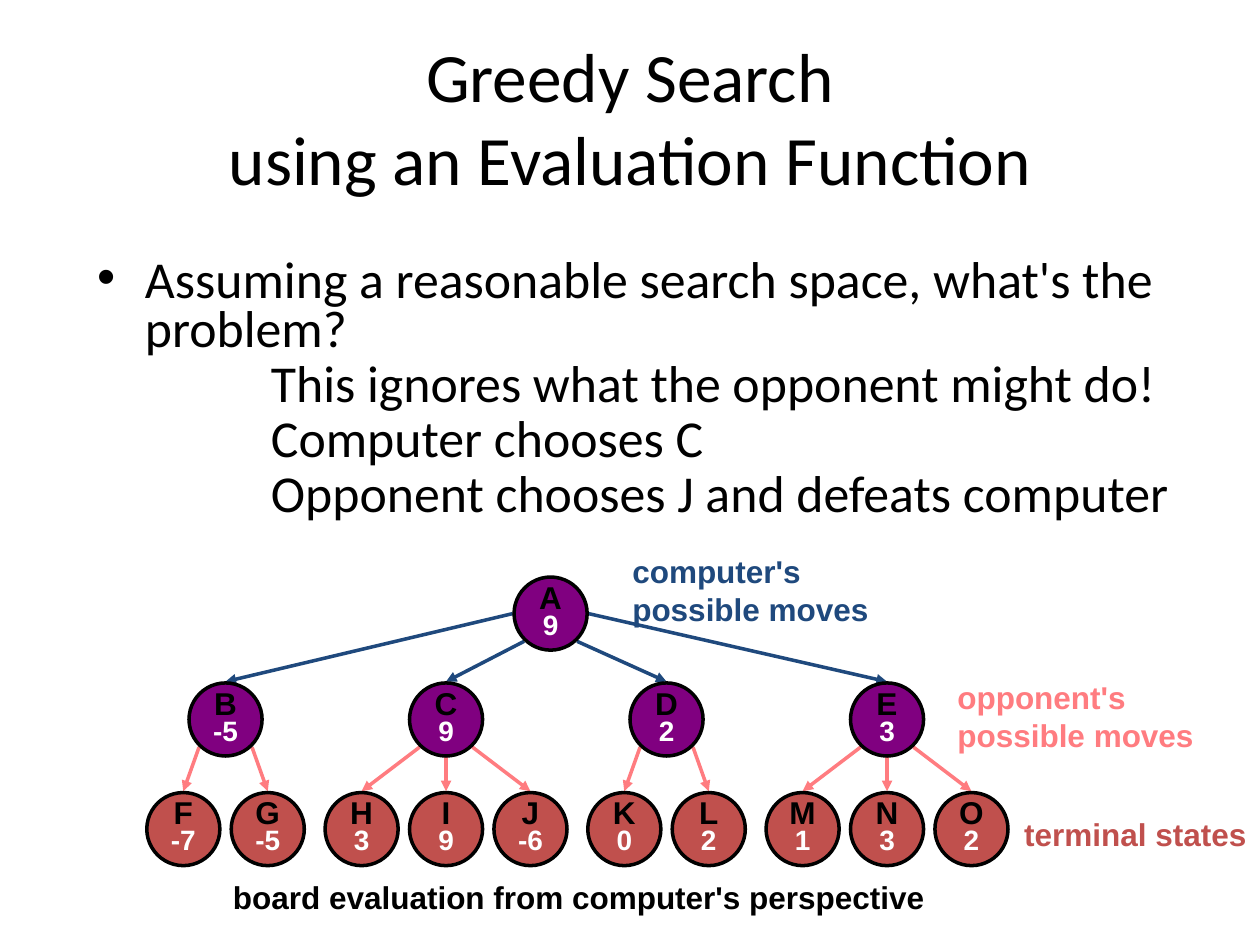
from dataclasses import dataclass

from lxml import etree
from pptx import Presentation
from pptx.dml.color import RGBColor
from pptx.enum import shapes as sh, text as tx
from pptx.oxml.ns import qn
from pptx.util import Inches, Pt

BLACK, WHITE = "000000", "FFFFFF"
PURPLE, RED = "800080", "C0504D"
NAVY, PINK = "1F497D", "FF7C80"
SIZE, PITCH = 0.58, 0.67


@dataclass
class Node:
    name: str
    score: str
    x: float
    y: float
    fill: str


@dataclass
class Label:
    text: str
    x: float
    y: float
    w: float
    h: float
    color: str


def rgb(code: str) -> RGBColor:
    return RGBColor.from_string(code)


def write(para, text: str, size=18, font="Arial", color=BLACK, bold=False,
          align=None, space=None, before=None) -> None:
    para.text = text
    para.alignment = align
    para.line_spacing = space
    para.space_before = before
    for item in (para, *para.runs):
        item.font.size = Pt(size)
        item.font.name = font
        item.font.bold = bold
        item.font.color.rgb = rgb(color)


def place(shape, x: float, y: float, w: float, h: float) -> None:
    shape.left, shape.top = Inches(x), Inches(y)
    shape.width, shape.height = Inches(w), Inches(h)


def indent(para, left: float, first: float, mark: str = "") -> None:
    props = para._p.get_or_add_pPr()
    props.set("marL", str(Inches(left)))
    props.set("indent", str(Inches(first)))
    if mark:
        etree.SubElement(props, qn("a:buFont")).set("typeface", "Arial")
        etree.SubElement(props, qn("a:buChar")).set("char", mark)
    else:
        etree.SubElement(props, qn("a:buNone"))


def draw_node(slide, node: Node) -> None:
    oval = slide.shapes.add_shape(
        sh.MSO_SHAPE.OVAL, Inches(node.x - SIZE / 2),
        Inches(node.y - SIZE / 2), Inches(SIZE), Inches(SIZE))
    oval.shadow.inherit = False
    oval.fill.solid()
    oval.fill.fore_color.rgb = rgb(node.fill)
    oval.line.color.rgb = rgb(BLACK)
    oval.line.width = Pt(2)
    frame = oval.text_frame
    frame.word_wrap = False
    frame.vertical_anchor = tx.MSO_ANCHOR.MIDDLE
    style = dict(bold=True, align=tx.PP_ALIGN.CENTER, space=0.75)
    write(frame.paragraphs[0], node.name, **style)
    write(frame.add_paragraph(), node.score, size=16, color=WHITE, **style)


def draw_arrow(slide, top: Node, low: Node, color: str) -> None:
    gap = low.x - top.x
    side = 0 if abs(gap) < 0.1 else (1 if gap > 0 else -1)
    if side == 0:
        dx, dy = 0, 0.3
    elif abs(gap) > 2:
        dx, dy = 0.3 * side, 0
    else:
        dx, dy = 0.21 * side, 0.22
    line = slide.shapes.add_connector(
        sh.MSO_CONNECTOR.STRAIGHT, Inches(top.x + dx), Inches(top.y + dy),
        Inches(low.x), Inches(low.y - SIZE / 2 - 0.01))
    line.line.color.rgb = rgb(color)
    line.line.width = Pt(2)
    etree.SubElement(line.line._get_or_add_ln(), qn("a:tailEnd")).set("type", "triangle")
    etree.SubElement(line._element.spPr, qn("a:effectLst"))


def draw_label(slide, label: Label) -> None:
    box = slide.shapes.add_textbox(0, 0, 0, 0)
    place(box, label.x, label.y, label.w, label.h)
    box.text_frame.word_wrap = False
    write(box.text_frame.paragraphs[0], label.text, color=label.color, bold=True)


def draw_text(slide) -> None:
    title, body = slide.placeholders
    place(title, 0.5, 0.3, 9, 1.25)
    title.text_frame.auto_size = tx.MSO_AUTO_SIZE.NONE
    write(title.text_frame.paragraphs[0],
          "Greedy Search\vusing an Evaluation Function",
          size=39.6, font="Calibri", align=tx.PP_ALIGN.CENTER)

    place(body, 0.67, 2, 9.08, 2.33)
    frame = body.text_frame
    frame.auto_size = tx.MSO_AUTO_SIZE.NONE
    style = dict(size=29.6, font="Calibri", space=0.8)
    para = frame.paragraphs[0]
    write(para, "Assuming a reasonable search space, what's the problem?",
          before=Pt(9), **style)
    indent(para, 0.38, -0.38, "•")
    for line in ("This ignores what the opponent might do!",
                 "Computer chooses C",
                 "Opponent chooses J and defeats computer"):
        para = frame.add_paragraph()
        write(para, line, before=Pt(3), **style)
        indent(para, 1.38, 0)


def draw_tree(slide) -> None:
    root = Node("A", "9", 4.37, 4.87, PURPLE)
    moves = [
        ("B", "-5", [("F", "-7"), ("G", "-5")]),
        ("C", "9", [("H", "3"), ("I", "9"), ("J", "-6")]),
        ("D", "2", [("K", "0"), ("L", "2")]),
        ("E", "3", [("M", "1"), ("N", "3"), ("O", "2")]),
    ]
    nodes = [root]
    for col, (name, score, leaves) in enumerate(moves):
        move = Node(name, score, 1.79 + 1.75 * col, 5.71, PURPLE)
        nodes.append(move)
        draw_arrow(slide, root, move, NAVY)
        for i, (leaf, value) in enumerate(leaves):
            x = move.x + (i - (len(leaves) - 1) / 2) * PITCH
            end = Node(leaf, value, x, 6.58, RED)
            nodes.append(end)
            draw_arrow(slide, move, end, PINK)
    for node in nodes:
        draw_node(slide, node)


def main() -> None:
    deck = Presentation()
    deck.slide_width, deck.slide_height = Inches(10), Inches(7.5)
    slide = deck.slides.add_slide(deck.slide_layouts[1])
    draw_text(slide)
    draw_tree(slide)
    for label in (
        Label("computer's\vpossible moves", 4.92, 4.33, 2.08, 0.7, NAVY),
        Label("opponent's\vpossible moves", 7.5, 5.33, 2.08, 0.7, PINK),
        Label("board evaluation from computer's perspective",
              1.75, 6.92, 5.69, 0.4, BLACK),
        Label("terminal states", 8.03, 6.42, 1.97, 0.4, RED),
    ):
        draw_label(slide, label)
    deck.save("out.pptx")


if __name__ == "__main__":
    main()
